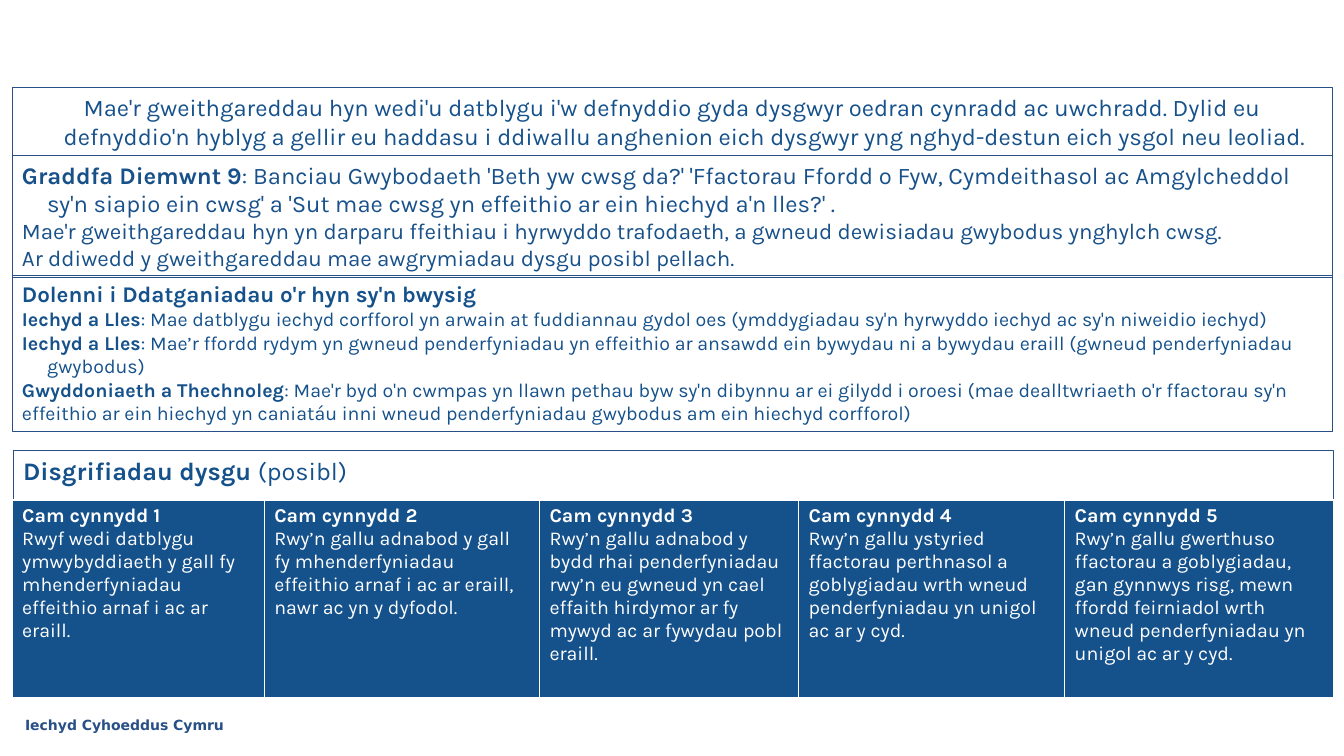
from lxml import etree
from pptx import Presentation
from pptx import util as u
from pptx.dml.color import RGBColor
from pptx.enum import shapes, text
from pptx.oxml.ns import qn

COLOURS = {"line": "285087", "blue": "15518B", "ink": "18518A", "white": "FFFFFF"}
FONT = "Karla"
LEFT, WIDTH, HANG = 0.12, 13.1, 0.25


def colour(name):
    return RGBColor.from_string(COLOURS[name])


class SlideBuilder:
    def __init__(self, slide):
        self.slide = slide

    def add_paragraphs(self, frame, paragraphs, tint, font=FONT):
        for index, (size, hanging, runs) in enumerate(paragraphs):
            paragraph = frame.paragraphs[0] if index == 0 else frame.add_paragraph()
            paragraph.alignment = text.PP_ALIGN.LEFT
            if hanging:
                properties = paragraph._p.get_or_add_pPr()
                properties.set("marL", str(u.Inches(HANG)))
                properties.set("indent", str(-u.Inches(HANG)))
            for wording, bold in runs:
                run = paragraph.add_run()
                run.text = wording
                run.font.size = u.Pt(size)
                run.font.name = font
                run.font.bold = bold
                run.font.color.rgb = colour(tint)

    def outline(self, shape, paragraphs, tint):
        shape.fill.background()
        shape.line.color.rgb = colour("line")
        shape.line.width = u.Pt(0.75)
        shape.text_frame.word_wrap = True
        shape.text_frame.auto_size = text.MSO_AUTO_SIZE.NONE
        shape.text_frame.vertical_anchor = text.MSO_ANCHOR.TOP
        self.add_paragraphs(shape.text_frame, paragraphs, tint)

    def title(self, left, top, width, height, paragraphs):
        heading = self.slide.shapes.title
        heading.left, heading.top = u.Inches(left), u.Inches(top)
        heading.width, heading.height = u.Inches(width), u.Inches(height)
        self.outline(heading, paragraphs, "blue")

    def box(self, top, height, paragraphs, tint="blue"):
        panel = self.slide.shapes.add_shape(
            shapes.MSO_SHAPE.RECTANGLE,
            u.Inches(LEFT), u.Inches(top), u.Inches(WIDTH), u.Inches(height))
        panel.shadow.inherit = False
        self.outline(panel, paragraphs, tint)
        return panel

    def label(self, left, top, width, height, wording):
        owner = self.slide.shapes.add_textbox(
            u.Inches(left), u.Inches(top), u.Inches(width), u.Inches(height))
        owner.text_frame.word_wrap = True
        self.add_paragraphs(
            owner.text_frame, [(10, False, [(wording, True)])], "line", "DejaVu Sans")

    def border(self, side, points):
        edge = etree.Element(qn(f"a:ln{side}"), w=str(u.Pt(points)))
        fill = etree.SubElement(edge, qn("a:solidFill"))
        etree.SubElement(fill, qn("a:srgbClr"), val=COLOURS["white"])
        return edge

    def steps_table(self, top, height, widths, steps):
        table = self.slide.shapes.add_table(
            1, len(steps), u.Inches(LEFT), u.Inches(top),
            u.Inches(sum(widths)), u.Inches(height)).table
        for column, (width, description) in enumerate(zip(widths, steps)):
            table.columns[column].width = u.Inches(width)
            cell = table.cell(0, column)
            cell.fill.solid()
            cell.fill.fore_color.rgb = colour("blue")
            self.add_paragraphs(cell.text_frame, [
                (14, False, [(f"Cam cynnydd {column + 1}", True)]),
                (14, False, [(description, False)]),
            ], "white")
            properties = cell._tc.get_or_add_tcPr()
            for place, (side, points) in enumerate(zip("LRTB", (1, 1, 1, 3))):
                properties.insert(place, self.border(side, points))


INTRO = [(17, True, [(
    "Mae'r gweithgareddau hyn wedi'u datblygu i'w defnyddio gyda dysgwyr oedran cynradd ac uwchradd. "
    "Dylid eu defnyddio'n hyblyg a gellir eu haddasu i ddiwallu anghenion eich dysgwyr yng nghyd-destun "
    "eich ysgol neu leoliad.", False)])]

DIAMOND = [
    (17, True, [
        ("Graddfa Diemwnt 9", True),
        (": Banciau Gwybodaeth 'Beth yw cwsg da?' 'Ffactorau Ffordd o Fyw, Cymdeithasol ac Amgylcheddol "
         "sy'n siapio ein cwsg' a 'Sut mae cwsg yn effeithio ar ein hiechyd a'n lles?' .", False)]),
    (16, True, [("Mae'r gweithgareddau hyn yn darparu ffeithiau i hyrwyddo trafodaeth, a gwneud "
                 "dewisiadau gwybodus ynghylch cwsg.", False)]),
    (16, True, [("Ar ddiwedd y gweithgareddau mae awgrymiadau dysgu posibl pellach.", False)]),
]

STATEMENTS = [
    (16, True, [("Dolenni i Ddatganiadau o'r hyn sy'n bwysig", True)]),
    (14, True, [
        ("Iechyd a Lles", True),
        (": Mae datblygu iechyd corfforol yn arwain at fuddiannau gydol oes (ymddygiadau sy'n hyrwyddo "
         "iechyd ac sy'n niweidio iechyd)", False)]),
    (14, True, [
        ("Iechyd a Lles", True),
        (": Mae’r ffordd rydym yn gwneud penderfyniadau yn effeithio ar ansawdd ein bywydau ni a bywydau "
         "eraill (gwneud penderfyniadau gwybodus)", False)]),
    (14, False, [
        ("Gwyddoniaeth a Thechnoleg", True),
        (": Mae'r byd o'n cwmpas yn llawn pethau byw sy'n dibynnu ar ei gilydd i oroesi (mae dealltwriaeth "
         "o'r ffactorau sy'n effeithio ar ein hiechyd yn caniatáu inni wneud penderfyniadau gwybodus am "
         "ein hiechyd corfforol)", False)]),
]

STEPS = [
    "Rwyf wedi datblygu ymwybyddiaeth y gall fy mhenderfyniadau effeithio arnaf i ac ar eraill.",
    "Rwy’n gallu adnabod y gall fy mhenderfyniadau effeithio arnaf i ac ar eraill, nawr ac yn y dyfodol.",
    "Rwy’n gallu adnabod y bydd rhai penderfyniadau rwy’n eu gwneud yn cael effaith hirdymor ar fy "
    "mywyd ac ar fywydau pobl eraill.",
    "Rwy’n gallu ystyried ffactorau perthnasol a goblygiadau wrth wneud penderfyniadau yn unigol ac ar y cyd.",
    "Rwy’n gallu gwerthuso ffactorau a goblygiadau, gan gynnwys risg, mewn ffordd feirniadol wrth wneud "
    "penderfyniadau yn unigol ac ar y cyd.",
]


def main():
    deck = Presentation()
    deck.slide_width, deck.slide_height = u.Inches(13.33), u.Inches(7.5)
    builder = SlideBuilder(deck.slides.add_slide(deck.slide_layouts[5]))
    builder.label(0.15, 7.06, 2.42, 0.27, "Iechyd Cyhoeddus Cymru")
    intro = builder.box(0.87, 0.67, INTRO)
    intro.text_frame.paragraphs[0].alignment = text.PP_ALIGN.CENTER
    builder.box(2.73, 1.55, STATEMENTS)
    builder.title(0.13, 4.47, WIDTH, 1.75, [
        (18, True, [("Disgrifiadau dysgu ", True), ("(posibl)", False)])])
    builder.box(1.54, 1.21, DIAMOND, "ink")
    builder.steps_table(4.96, 1.97, [2.5, 2.73, 2.57, 2.64, 2.67], STEPS)
    deck.save("out.pptx")


if __name__ == "__main__":
    main()
